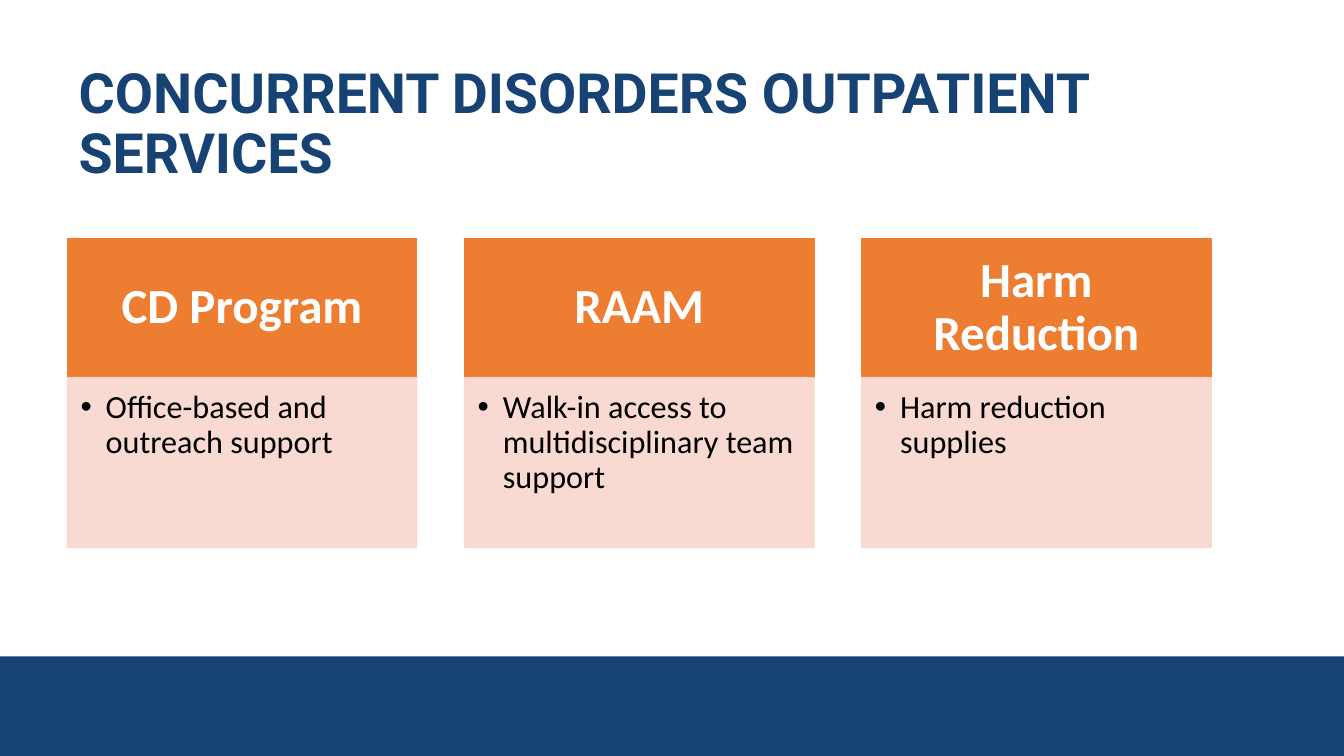
from dataclasses import dataclass

from lxml import etree
from pptx import Presentation
from pptx import util as u
from pptx.dml.color import RGBColor
from pptx.enum import shapes, text
from pptx.oxml import ns

COLOURS = {
    "navy": "174274",
    "orange": "ED7D31",
    "blush": "F8D7CE",
    "white": "FFFFFF",
    "black": "000000",
}
SLIDE_WIDTH, SLIDE_HEIGHT = 960, 540
BAND_TOP = 468.9
CARD_LEFT, CARD_WIDTH, CARD_PITCH = 48.1, 249.6, 283.7
HEADING_TOP, HEADING_HEIGHT, DETAIL_HEIGHT = 170.3, 99.4, 121.3
BULLET_INDENT = 18


@dataclass(frozen=True)
class Service:
    heading: str
    detail: str


@dataclass(frozen=True)
class PanelStyle:
    fill: str
    ink: str
    size: float
    bold: bool
    anchor: text.MSO_ANCHOR
    align: text.PP_ALIGN
    insets: tuple[float, float, float, float]
    opacity: int = 100
    bulleted: bool = False


SERVICES = [
    Service("CD Program", "Office-based and outreach support"),
    Service("RAAM", "Walk-in access to multidisciplinary team support"),
    Service("Harm Reduction", "Harm reduction supplies"),
]
HEADING = PanelStyle("orange", "white", 35, True, text.MSO_ANCHOR.MIDDLE,
                     text.PP_ALIGN.CENTER, (19.6, 11.2, 19.6, 11.2))
DETAIL = PanelStyle("blush", "black", 23, False, text.MSO_ANCHOR.TOP,
                    text.PP_ALIGN.LEFT, (9.4, 9.4, 12.9, 14.4),
                    opacity=90, bulleted=True)


def colour(name: str) -> RGBColor:
    return RGBColor.from_string(COLOURS[name])


def add_block(slide, left: float, top: float, width: float, height: float, fill: str):
    block = slide.shapes.add_shape(shapes.MSO_SHAPE.RECTANGLE, u.Pt(left), u.Pt(top),
                                   u.Pt(width), u.Pt(height))
    block.shadow.inherit = False
    block.fill.solid()
    block.fill.fore_color.rgb = colour(fill)
    block.line.fill.background()
    return block


def set_opacity(block, percent: int) -> None:
    for tint in block.fill._xPr.iter(ns.qn("a:srgbClr")):
        etree.SubElement(tint, ns.qn("a:alpha"), val=str(percent * 1000))


def add_bullet(paragraph) -> None:
    properties = paragraph._p.get_or_add_pPr()
    indent = u.Pt(BULLET_INDENT)
    properties.set("marL", str(indent))
    properties.set("indent", str(-indent))
    etree.SubElement(properties, ns.qn("a:buFont"), typeface="Arial")
    etree.SubElement(properties, ns.qn("a:buChar"), char="•")


def add_panel(slide, wording: str, left: float, top: float, height: float,
              style: PanelStyle) -> None:
    panel = add_block(slide, left, top, CARD_WIDTH, height, style.fill)
    panel.line.color.rgb = colour(style.fill)
    panel.line.width = u.Pt(1)
    if style.opacity < 100:
        set_opacity(panel, style.opacity)

    frame = panel.text_frame
    frame.text = wording
    frame.word_wrap = True
    frame.vertical_anchor = style.anchor
    (frame.margin_left, frame.margin_top,
     frame.margin_right, frame.margin_bottom) = map(u.Pt, style.insets)

    paragraph = frame.paragraphs[0]
    if style.bulleted:
        add_bullet(paragraph)
    paragraph.alignment = style.align
    paragraph.line_spacing = 0.9
    format_font(paragraph.runs[0].font, "Calibri", style.size, style.ink, style.bold)


def format_font(font, name: str, size: float, ink: str, bold: bool) -> None:
    font.name = name
    font.size = u.Pt(size)
    font.bold = bold
    font.color.rgb = colour(ink)


def add_title(slide, wording: str) -> None:
    title = slide.shapes.title
    title.left, title.top = u.Pt(49), u.Pt(28.8)
    title.width, title.height = u.Pt(862.6), u.Pt(121.7)
    frame = title.text_frame
    frame.text = wording
    frame.word_wrap = True
    frame.auto_size = text.MSO_AUTO_SIZE.NONE
    frame.vertical_anchor = text.MSO_ANCHOR.MIDDLE
    paragraph = frame.paragraphs[0]
    paragraph.alignment = text.PP_ALIGN.LEFT
    paragraph.line_spacing = 0.9
    format_font(paragraph.runs[0].font, "Roboto", 39.6, "navy", True)


def main() -> None:
    deck = Presentation()
    deck.slide_width, deck.slide_height = u.Pt(SLIDE_WIDTH), u.Pt(SLIDE_HEIGHT)
    slide = deck.slides.add_slide(deck.slide_layouts.get_by_name("Title Only"))

    # Footer band and title
    add_block(slide, 0, BAND_TOP, SLIDE_WIDTH, SLIDE_HEIGHT - BAND_TOP, "navy")
    add_title(slide, "CONCURRENT DISORDERS OUTPATIENT SERVICES")

    # Service cards: heading above detail
    for column, service in enumerate(SERVICES):
        left = CARD_LEFT + column * CARD_PITCH
        add_panel(slide, service.heading, left, HEADING_TOP, HEADING_HEIGHT, HEADING)
        add_panel(slide, service.detail, left, HEADING_TOP + HEADING_HEIGHT,
                  DETAIL_HEIGHT, DETAIL)

    deck.save("out.pptx")


if __name__ == "__main__":
    main()
